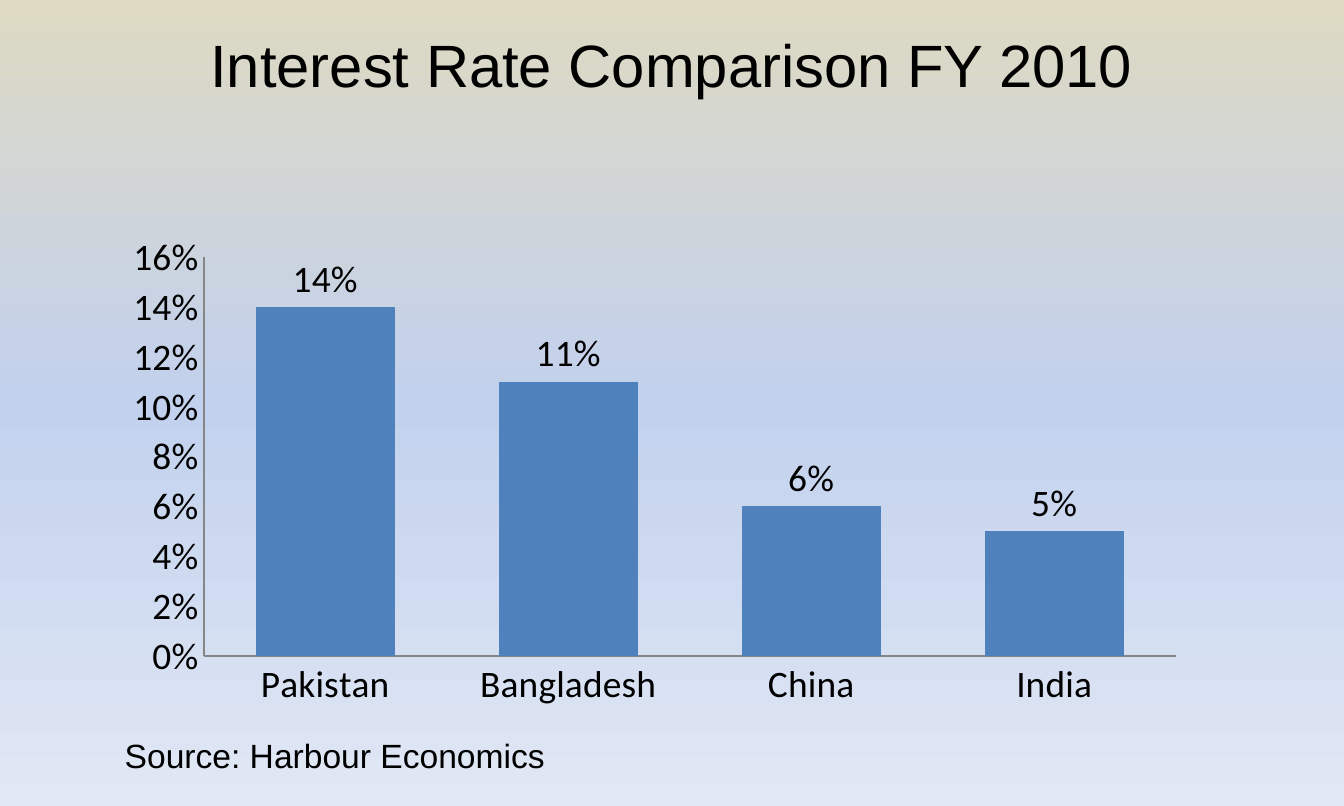
import copy

import pptx
import pptx.chart.data
import pptx.dml.color
import pptx.enum.chart
import pptx.enum.text
import pptx.util

Inches = pptx.util.Inches
Pt = pptx.util.Pt
RGBColor = pptx.dml.color.RGBColor
Align = pptx.enum.text.PP_ALIGN
Anchor = pptx.enum.text.MSO_ANCHOR
Fit = pptx.enum.text.MSO_AUTO_SIZE
Tick = pptx.enum.chart.XL_TICK_MARK

BLACK = RGBColor(0x00, 0x00, 0x00)
BLUE = RGBColor(0x4F, 0x81, 0xBD)
GRAY = RGBColor(0x86, 0x86, 0x86)
SAND = RGBColor(0xDD, 0xD9, 0xC3)
SKY = RGBColor(0xC2, 0xD1, 0xED)
MIST = RGBColor(0xE1, 0xE8, 0xF5)

RATES = {"Pakistan": 0.14, "Bangladesh": 0.11, "China": 0.06, "India": 0.05}


def write(frame, text, size=18, font="Arial", color=BLACK, align=Align.LEFT,
          indent=0):
    par = frame.paragraphs[0]
    par.alignment = align
    if indent:
        props = par._p.get_or_add_pPr()
        props.set("marL", "0")
        props.set("indent", str(Inches(indent)))
    run = par.add_run()
    run.text = text
    run.font.size = Pt(size)
    run.font.name = font
    run.font.color.rgb = color


class Deck:
    """Hold the chart style and the current slide."""

    def __init__(self, deck):
        self.font = "Calibri"
        self.size = 20
        self.slide = deck.slides.add_slide(deck.slide_layouts[5])

    def shade(self, *colors):
        fill = self.slide.background.fill
        fill.gradient()
        fill.gradient_angle = 270
        stops = self.slide.element.xpath(".//a:gsLst")[0]
        while len(stops) < len(colors):
            stops.append(copy.deepcopy(stops[0]))
        for i, (stop, color) in enumerate(zip(fill.gradient_stops, colors)):
            stop.position = i / (len(colors) - 1)
            stop.color.rgb = color

    def title(self, text, left, top, width, height):
        box = self.slide.shapes.title
        box.left, box.top = Inches(left), Inches(top)
        box.width, box.height = Inches(width), Inches(height)
        frame = box.text_frame
        frame.auto_size = Fit.NONE
        frame.vertical_anchor = Anchor.TOP
        frame.margin_top = 0
        write(frame, text, size=32, align=Align.CENTER)

    def label(self, text, left, top, width, height, **style):
        box = self.slide.shapes.add_textbox(
            Inches(left), Inches(top), Inches(width), Inches(height))
        box.text_frame.word_wrap = True
        write(box.text_frame, text, **style)

    def chart(self, rates, left, top, width, height):
        data = pptx.chart.data.CategoryChartData(number_format="0%")
        data.categories = list(rates)
        data.add_series("Series 1", list(rates.values()))
        chart = self.slide.shapes.add_chart(
            pptx.enum.chart.XL_CHART_TYPE.COLUMN_CLUSTERED,
            Inches(left), Inches(top), Inches(width), Inches(height),
            data).chart
        chart.has_legend = False
        chart.has_title = False
        chart.font.name = self.font
        chart.font.size = Pt(self.size)
        chart.font.color.rgb = BLACK

        for axis in (chart.category_axis, chart.value_axis):
            axis.has_major_gridlines = False
            axis.major_tick_mark = Tick.NONE
            axis.minor_tick_mark = Tick.NONE
            axis.format.line.color.rgb = GRAY
            axis.format.line.width = Pt(0.75)
        scale = chart.value_axis
        scale.minimum_scale = 0
        scale.maximum_scale = 0.16
        scale.major_unit = 0.02
        scale.tick_labels.number_format = "0%"
        scale.tick_labels.number_format_is_linked = False

        plot = chart.plots[0]
        plot.gap_width = 75
        plot.vary_by_categories = False
        bars = plot.series[0]
        bars.format.fill.solid()
        bars.format.fill.fore_color.rgb = BLUE
        marks = bars.data_labels
        marks.show_value = True
        marks.number_format = "0%"
        marks.number_format_is_linked = False
        marks.position = pptx.enum.chart.XL_LABEL_POSITION.OUTSIDE_END


def main():
    deck = pptx.Presentation()
    deck.slide_width, deck.slide_height = Inches(10), Inches(6)
    page = Deck(deck)
    page.shade(SAND, SKY, MIST)
    page.title("Interest Rate Comparison FY 2010", 0.5, 0.21, 9, 1)
    page.chart(RATES, 0.83, 1.67, 8.08, 3.67)
    page.label("Source: Harbour Economics", 0.33, 5.42, 4.4, 0.4, indent=0.5)
    deck.save("out.pptx")


if __name__ == "__main__":
    main()
